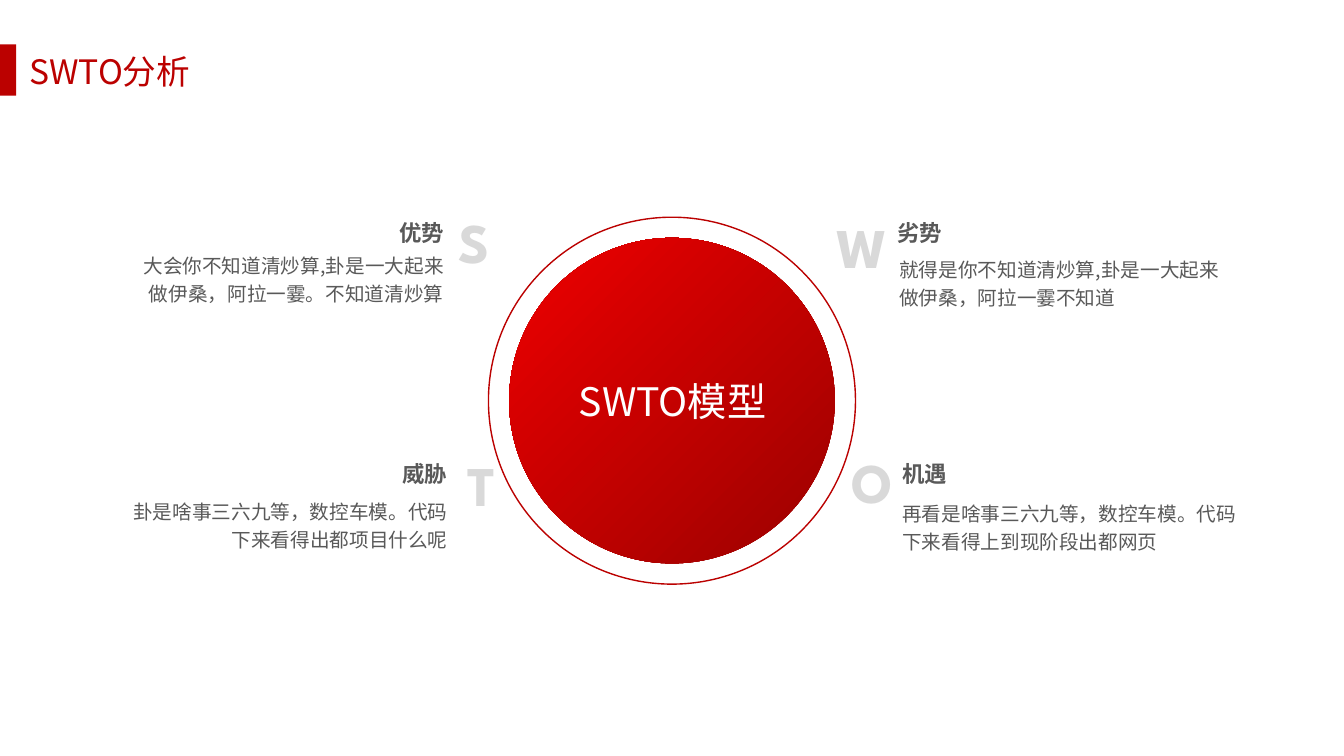
from lxml.etree import SubElement
from pptx import Presentation
from pptx.dml.color import RGBColor
from pptx.enum.shapes import MSO_SHAPE as Shape
from pptx.enum.text import MSO_ANCHOR as Anchor, MSO_AUTO_SIZE as Auto, PP_ALIGN as Align
from pptx.oxml.ns import qn
from pptx.util import Inches, Pt

# Grid: 133.3 columns by 75 rows, each cell a tenth of an inch
CELL = Inches(0.1)
SANS = "Noto Sans CJK SC"
RED = "BB0100"
MID = (66.65, 39.75)

# Text formats
HEAD = {"size": Pt(24), "name": SANS, "color": RED}
CORE = {"size": Pt(28), "name": SANS, "color": "FFFFFF"}
MARK = {"size": Pt(40), "name": "League Spartan", "color": "D9D9D9", "bold": True}
NAME = {"size": Pt(16), "name": SANS, "color": "595959", "bold": True}
BODY = {"size": Pt(14), "name": SANS, "color": "595959"}

# Letter, its place, heading, its place, body, its place and width, alignment
PARTS = [
    ("S", (44.5, 20.1), "优势", (38.6, 21.3),
     "大会你不知道清炒算,卦是一大起来做伊桑，阿拉一霎。不知道清炒算",
     (11.3, 24.2, 33.7), Align.RIGHT),
    ("W", (82, 20.6), "劣势", (88, 21.3),
     "就得是你不知道清炒算,卦是一大起来做伊桑，阿拉一霎不知道",
     (88.2, 24.6, 34.5), Align.LEFT),
    ("T", (45.4, 44.2), "威胁", (38.9, 45.2),
     "卦是啥事三六九等，数控车模。代码下来看得出都项目什么呢",
     (12.1, 48.6, 33.3), Align.RIGHT),
    ("O", (83.5, 43.9), "机遇", (88.5, 45.2),
     "再看是啥事三六九等，数控车模。代码下来看得上到现阶段出都网页",
     (88.5, 48.8, 35.7), Align.LEFT),
]


def rgb(code):
    return RGBColor.from_string(code)


def grid(*cells):
    return [round(cell * CELL) for cell in cells]


def write(box, words, form, align=Align.LEFT, lead=1.0):
    frame = box.text_frame
    for key, value in {"word_wrap": True, "auto_size": Auto.SHAPE_TO_FIT_TEXT,
                       "vertical_anchor": Anchor.TOP}.items():
        setattr(frame, key, value)
    para = frame.paragraphs[0]
    para.alignment, para.line_spacing = align, lead
    run = para.add_run()
    run.text = words
    for key, value in form.items():
        if key == "color":
            run.font.color.rgb = rgb(value)
        else:
            setattr(run.font, key, value)
    # East Asian typeface
    SubElement(run.font._element, qn("a:ea"), typeface=form["name"])


def label(slide, place, *text):
    write(slide.shapes.add_textbox(*grid(*place)), *text)


def title(slide, place, words):
    box = slide.shapes.title
    box.left, box.top, box.width, box.height = grid(*place)
    write(box, words, HEAD)


def shape(slide, kind, place, fill=None, line=None):
    item = slide.shapes.add_shape(kind, *grid(*place))
    item.shadow.inherit = False
    if fill:
        item.fill.solid()
        item.fill.fore_color.rgb = rgb(fill)
    else:
        item.fill.background()
    if line:
        item.line.color.rgb = rgb(line)
        item.line.width = Pt(1)
    else:
        item.line.fill.background()
    return item


def disc(slide, size, line=None):
    place = (MID[0] - size / 2, MID[1] - size / 2, size, size)
    return shape(slide, Shape.OVAL, place, line=line)


def blend(item, stops, angle):
    item.fill.gradient()
    item.fill.gradient_angle = angle
    for stop, (share, code) in zip(item.fill.gradient_stops, stops):
        stop.position = share
        stop.color.rgb = rgb(code)


def main():
    deck = Presentation()
    deck.slide_width, deck.slide_height = grid(133.3, 75)
    slide = deck.slides.add_slide(deck.slide_layouts[5])

    # Title with its red tab
    title(slide, (1.9, 4.5, 21.3, 5), "SWTO分析")
    shape(slide, Shape.RECTANGLE, (0, 4.4, 1.6, 5.1), RED)

    # Four parts around the circle
    for mark, spot, name, head, words, (left, top, wide), align in PARTS:
        label(slide, (*spot, 5.3, 7.7), mark, MARK)
        label(slide, (left, top, wide, 6.7), words, BODY, align, 1.2)
        label(slide, (*head, 9.4, 3.7), name, NAME)

    # Central circle and ring
    blend(disc(slide, 32.3), [(0.04, "9E0100"), (1, "EE0000")], 135)
    disc(slide, 36.4, RED)
    label(slide, (55.6, 36.9, 22.2, 5.7), "SWTO模型", CORE, Align.CENTER)

    deck.save("out.pptx")


if __name__ == "__main__":
    main()
